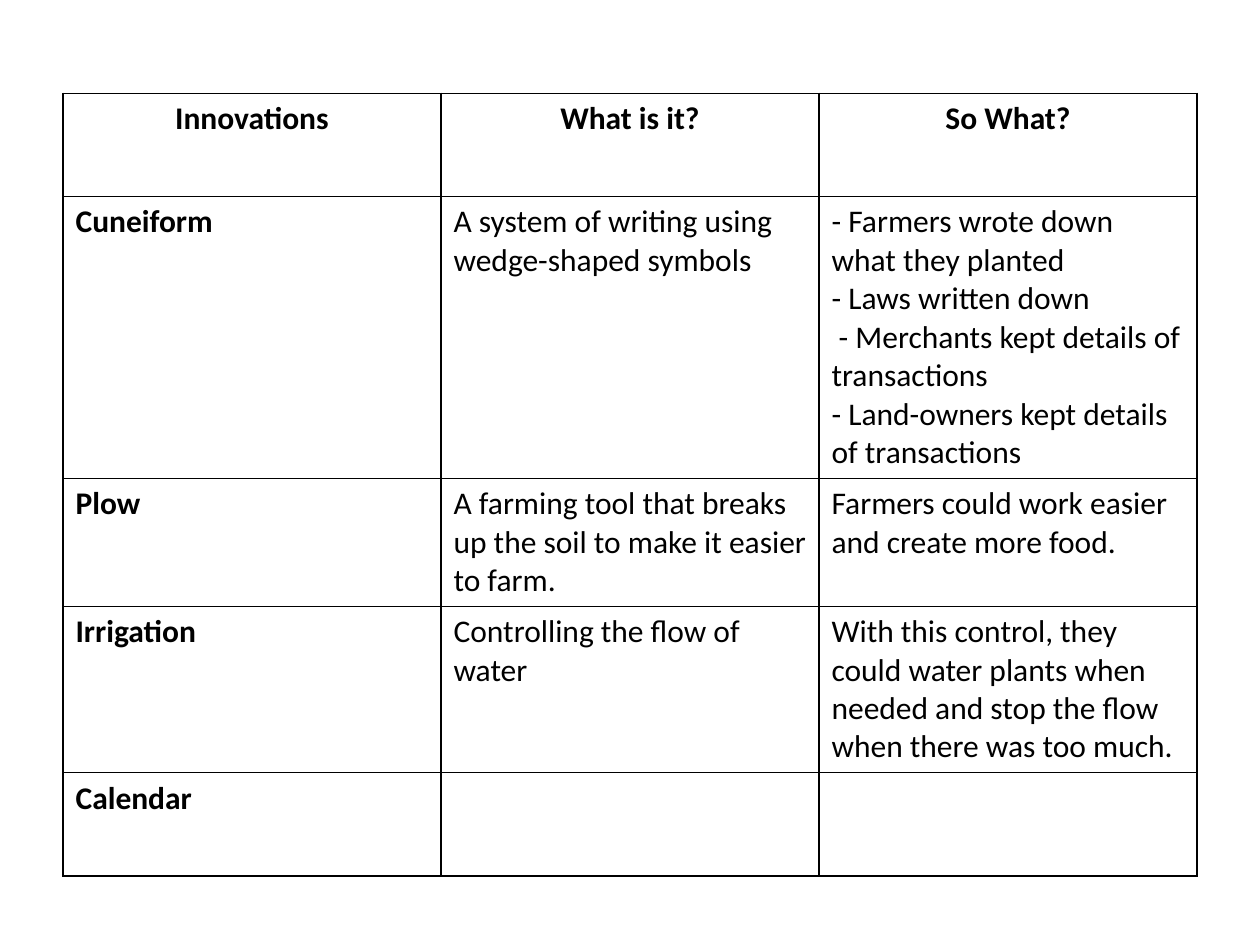
from lxml import etree
from pptx import Presentation
from pptx.dml.color import RGBColor
from pptx.enum.text import PP_ALIGN
from pptx.oxml.ns import qn
from pptx.util import Inches, Pt

CENTER = PP_ALIGN.CENTER
LEFT = PP_ALIGN.LEFT
COLORS = {"ink": "000000", "paper": "FFFFFF"}
HEADS = ["Innovations", "What is it?", "So What?"]
ROWS = [
    ["Cuneiform", "A system of writing using wedge-shaped symbols",
     "- Farmers wrote down what they planted\n"
     "- Laws written down\n"
     " - Merchants kept details of transactions\n"
     "- Land-owners kept details of transactions"],
    ["Plow",
     "A farming tool that breaks up the soil to make it easier to farm.",
     "Farmers could work easier and create more food."],
    ["Irrigation", "Controlling the flow of water",
     "With this control, they could water plants when needed "
     "and stop the flow when there was too much."],
    ["Calendar", "", ""],
]
HEIGHTS = [0.82, 1.8, 0.82, 0.82, 0.82]


class Deck:
    def __init__(self, font, size):
        self.font = font
        self.size = Pt(size)
        self.prs = Presentation()
        self.prs.slide_width = Inches(10)
        self.prs.slide_height = Inches(7.5)
        self.slide = self.prs.slides.add_slide(self.prs.slide_layouts[6])

    def border(self, cell):
        props = cell._tc.get_or_add_tcPr()
        for index, side in enumerate(("lnL", "lnR", "lnT", "lnB")):
            line = etree.Element(qn("a:" + side), w=str(Pt(1)))
            fill = etree.SubElement(line, qn("a:solidFill"))
            etree.SubElement(fill, qn("a:srgbClr"), val=COLORS["ink"])
            props.insert(index, line)

    def cell(self, cell, text, bold, align):
        cell.text = text
        cell.fill.solid()
        cell.fill.fore_color.rgb = RGBColor.from_string(COLORS["paper"])
        for para in cell.text_frame.paragraphs:
            para.alignment = align
            para.font.name = self.font
            para.font.size = self.size
            para.font.bold = bold
            para.font.color.rgb = RGBColor.from_string(COLORS["ink"])
        self.border(cell)

    def table(self, left, top, width, heights, data):
        frame = self.slide.shapes.add_table(
            len(data), len(data[0]), Inches(left), Inches(top),
            Inches(width), Inches(sum(heights)))
        table = frame.table
        table.first_row = False
        table.horz_banding = False
        for row, height in enumerate(heights):
            table.rows[row].height = Inches(height)
            for col, text in enumerate(data[row]):
                self.cell(table.cell(row, col), text,
                          row == 0 or col == 0, LEFT if row else CENTER)

    def save(self):
        self.prs.save("out.pptx")


def main():
    deck = Deck("Calibri", 18)
    deck.table(0.5, 0.74, 9, HEIGHTS, [HEADS] + ROWS)
    deck.save()


if __name__ == "__main__":
    main()
